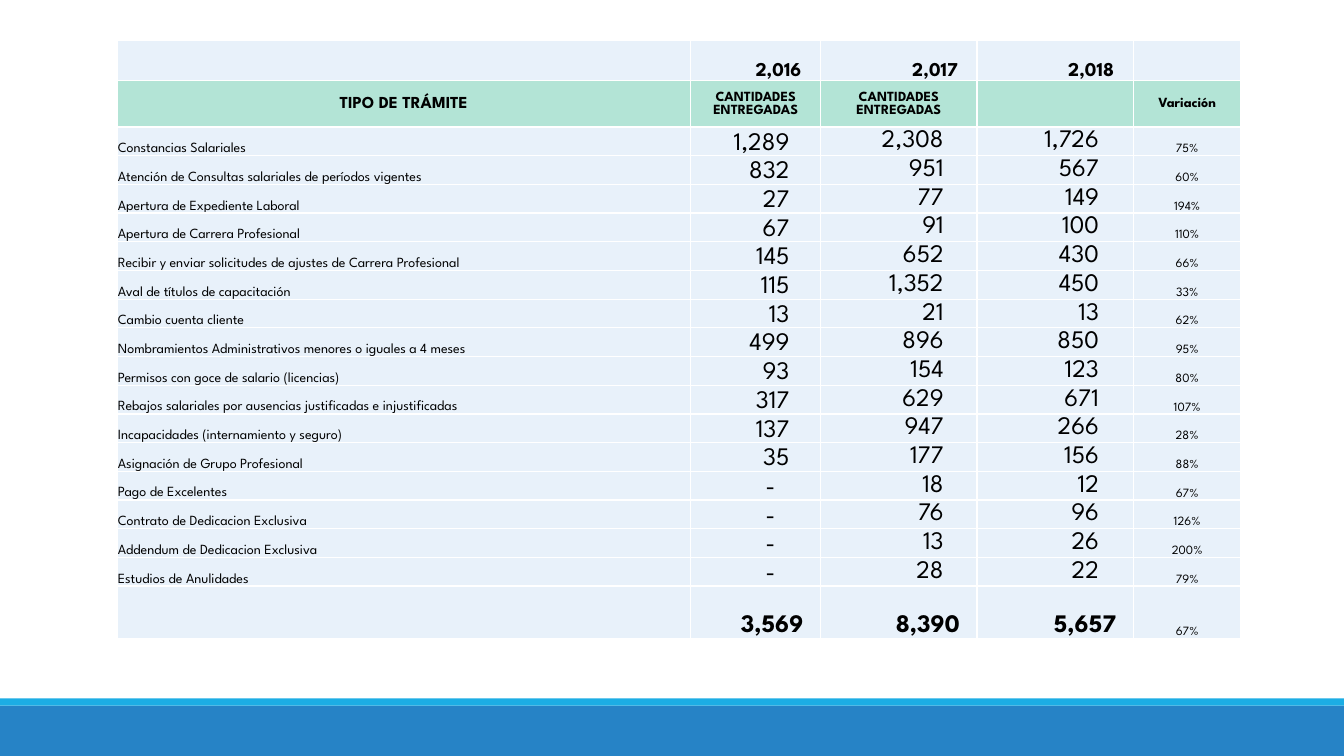
from dataclasses import dataclass

from lxml.etree import SubElement
from pptx import Presentation
from pptx.dml.color import RGBColor as Color
from pptx.enum.shapes import MSO_SHAPE as Shape
from pptx.enum.text import MSO_ANCHOR as Anchor, PP_ALIGN as Align
from pptx.oxml.ns import qn
from pptx.util import Inches, Pt


@dataclass(frozen=True)
class Theme:
    font: str = "League Spartan"
    ink: str = "000000"
    border: str = "FFFFFF"
    cell: str = "E8F1FA"
    header: str = "B3E4D6"
    band: str = "2683C6"
    stripe: str = "1CADE4"
    year_size: int = 14
    title_size: int = 12
    label_size: int = 10
    number_size: int = 18
    percent_size: int = 9


THEME = Theme()
WIDTH, HEIGHT = Inches(13.33), Inches(7.5)

# Table grid, in inches
TABLE_LEFT, TABLE_TOP = 1.16, 0.4
COLUMNS = [5.69, 1.29, 1.55, 1.55, 1.07]
YEAR_ROW, HEADER_ROW, BODY_HEIGHT, TOTAL_ROW = 0.4, 0.46, 4.56, 0.52

# Space to the right of the figures, in inches, for the three year columns
YEAR_INDENT, TOTAL_INDENT, DASH_INDENT = 0.19, 0.17, 0.45
NUMBER_INDENTS = [0.31, 0.33, 0.34]

YEARS = ["2,016", "2,017", "2,018"]
HEADERS = ["TIPO DE TRÁMITE", "CANTIDADES ENTREGADAS", "CANTIDADES ENTREGADAS",
           "", "Variación"]
PROCEDURES = [
    ("Constancias Salariales", "1,289", "2,308", "1,726", "75%"),
    ("Atención de Consultas salariales de períodos vigentes",
     "832", "951", "567", "60%"),
    ("Apertura de Expediente Laboral", "27", "77", "149", "194%"),
    ("Apertura de Carrera Profesional", "67", "91", "100", "110%"),
    ("Recibir y enviar solicitudes de ajustes de Carrera Profesional",
     "145", "652", "430", "66%"),
    ("Aval de títulos de capacitación", "115", "1,352", "450", "33%"),
    ("Cambio cuenta cliente", "13", "21", "13", "62%"),
    ("Nombramientos Administrativos menores o iguales a 4 meses",
     "499", "896", "850", "95%"),
    ("Permisos con goce de salario (licencias)", "93", "154", "123", "80%"),
    ("Rebajos salariales por ausencias justificadas e injustificadas",
     "317", "629", "671", "107%"),
    ("Incapacidades (internamiento y seguro)", "137", "947", "266", "28%"),
    ("Asignación de Grupo Profesional", "35", "177", "156", "88%"),
    ("Pago de Excelentes", "-", "18", "12", "67%"),
    ("Contrato de Dedicacion Exclusiva", "-", "76", "96", "126%"),
    ("Addendum de Dedicacion Exclusiva", "-", "13", "26", "200%"),
    ("Estudios de Anulidades", "-", "28", "22", "79%"),
]
TOTALS = ["3,569", "8,390", "5,657"]
TOTAL_PERCENT = "67%"


def add_band(page, top, height, color):
    """Draw a full-width band; top and height are shares of the slide."""
    band = page.shapes.add_shape(
        Shape.RECTANGLE, 0, int(HEIGHT * top), WIDTH, int(HEIGHT * height))
    band.shadow.inherit = False
    band.fill.solid()
    band.fill.fore_color.rgb = Color.from_string(color)
    band.line.fill.background()


def style_cell(cell, color):
    """Give a cell its borders, fill and narrow margins."""
    properties = cell._tc.get_or_add_tcPr()
    for side in ("a:lnL", "a:lnR", "a:lnT", "a:lnB"):
        line = SubElement(properties, qn(side), w=str(Pt(1)))
        fill = SubElement(line, qn("a:solidFill"))
        SubElement(fill, qn("a:srgbClr"), val=THEME.border)
    cell.fill.solid()
    cell.fill.fore_color.rgb = Color.from_string(color)
    cell.margin_left = cell.margin_right = cell.margin_top = Inches(0.01)
    cell.margin_bottom = 0


def write(cell, text, size, bold=False, align=Align.CENTER,
          anchor=Anchor.BOTTOM, indent=0.01):
    cell.vertical_anchor = anchor
    cell.margin_right = Inches(indent)
    para = cell.text_frame.paragraphs[0]
    para.alignment = align
    span = para.add_run()
    span.text = text
    span.font.name = THEME.font
    span.font.size = Pt(size)
    span.font.bold = bold
    span.font.color.rgb = Color.from_string(THEME.ink)


def add_grid(page):
    """Add the empty table with its rows, columns and fills."""
    body_row = BODY_HEIGHT / len(PROCEDURES)
    heights = [YEAR_ROW, HEADER_ROW, *[body_row] * len(PROCEDURES), TOTAL_ROW]
    frame = page.shapes.add_table(
        len(heights), len(COLUMNS), Inches(TABLE_LEFT), Inches(TABLE_TOP),
        Inches(sum(COLUMNS)), Inches(sum(heights)))
    table = frame.table
    table.first_row = table.horz_banding = False
    for column, width in zip(table.columns, COLUMNS):
        column.width = Inches(width)
    for index, height in enumerate(heights):
        table.rows[index].height = Inches(height)
        for cell in table.rows[index].cells:
            style_cell(cell, THEME.header if index == 1 else THEME.cell)
    return table


def fill_headings(table):
    for column, year in enumerate(YEARS, 1):
        write(table.cell(0, column), year, THEME.year_size, bold=True,
              align=Align.RIGHT, indent=YEAR_INDENT)
    for column, header in enumerate(HEADERS):
        if header:
            size = THEME.label_size if column else THEME.title_size
            write(table.cell(1, column), header, size, bold=True,
                  anchor=Anchor.MIDDLE)


def fill_procedures(table):
    for row, (label, *numbers, percent) in enumerate(PROCEDURES, 2):
        write(table.cell(row, 0), label, THEME.label_size, align=Align.LEFT)
        for column, number in enumerate(numbers, 1):
            indent = DASH_INDENT if number == "-" else NUMBER_INDENTS[column - 1]
            write(table.cell(row, column), number, THEME.number_size,
                  align=Align.RIGHT, indent=indent,
                  anchor=Anchor.BOTTOM if column == 1 else Anchor.MIDDLE)
        write(table.cell(row, 4), percent, THEME.percent_size)


def fill_totals(table):
    row = len(PROCEDURES) + 2
    for column, total in enumerate(TOTALS, 1):
        write(table.cell(row, column), total, THEME.number_size, bold=True,
              align=Align.RIGHT, indent=TOTAL_INDENT)
    write(table.cell(row, 4), TOTAL_PERCENT, THEME.percent_size)


def main():
    deck = Presentation()
    deck.slide_width, deck.slide_height = WIDTH, HEIGHT
    page = deck.slides.add_slide(deck.slide_layouts[6])

    # Bands at the foot
    add_band(page, 7 / 7.5, 0.5 / 7.5, THEME.band)
    add_band(page, 6.93 / 7.5, 0.07 / 7.5, THEME.stripe)

    # Table of procedures by year
    table = add_grid(page)
    fill_headings(table)
    fill_procedures(table)
    fill_totals(table)

    deck.save("out.pptx")


if __name__ == "__main__":
    main()
